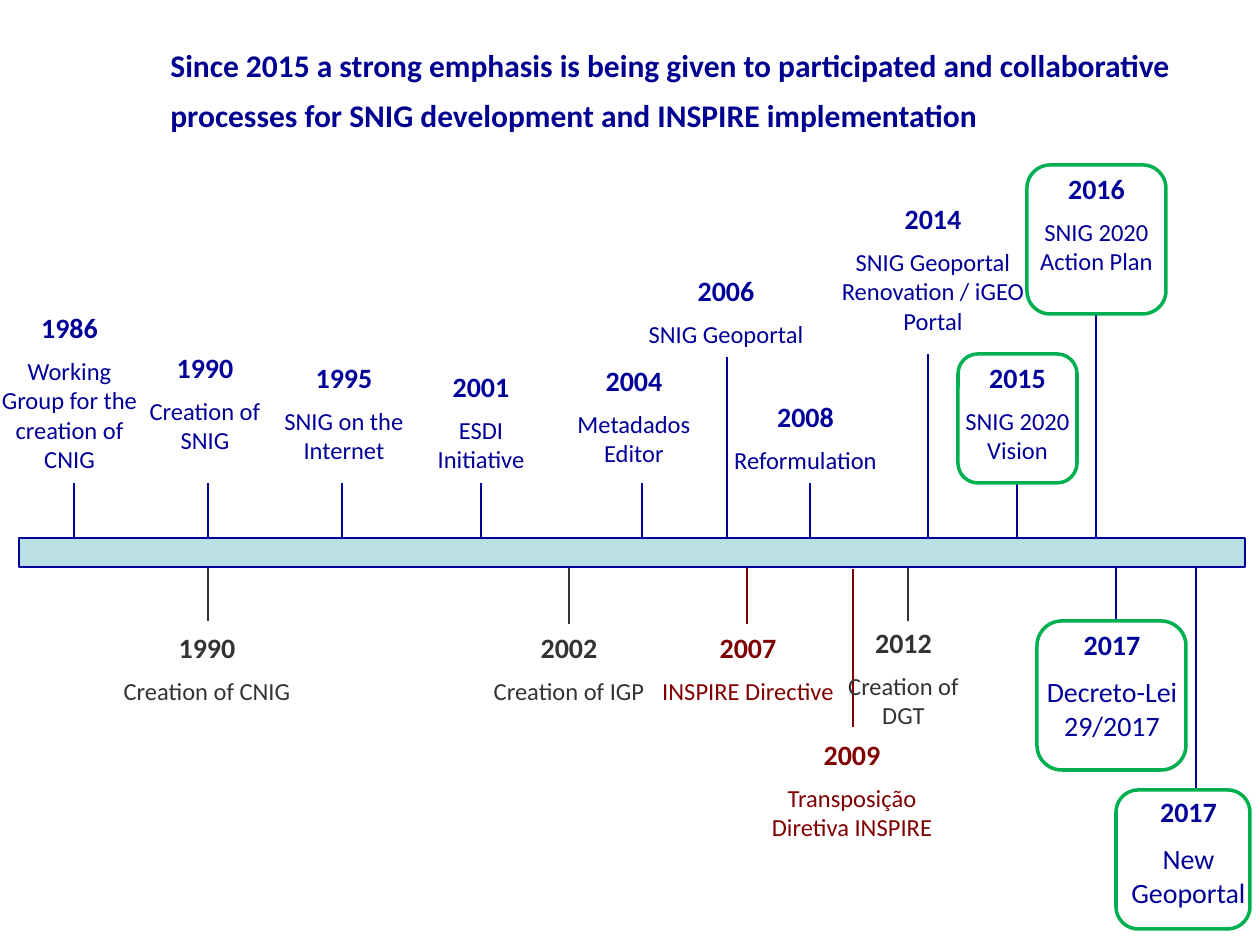
from pptx import Presentation
from pptx.dml.color import RGBColor
from pptx.enum.shapes import MSO_CONNECTOR, MSO_SHAPE
from pptx.enum.text import PP_ALIGN
from pptx.oxml.ns import qn
from pptx.util import Pt
from lxml import etree

LINE = MSO_CONNECTOR.STRAIGHT
RECT = MSO_SHAPE.RECTANGLE
ROUND = MSO_SHAPE.ROUNDED_RECTANGLE
LEFT, MID = PP_ALIGN.LEFT, PP_ALIGN.CENTER

COLORS = {
    "title": "000090",
    "blue": "000099",
    "gray": "333333",
    "red": "800000",
    "green": "00B050",
    "bar": "BBE0E3",
}
FONT = "Calibri"
DPI = 126


def px(n):
    return round(n * 914400 / DPI)


def rgb(name):
    return RGBColor.from_string(COLORS[name])


class Board:
    def __init__(self, slide):
        self.slide = slide

    def stem(self, x, top, end, color):
        line = self.slide.shapes.add_connector(LINE, px(x), px(top), px(x), px(end))
        line.line.color.rgb = rgb(color)
        line.line.width = Pt(1.5)
        etree.SubElement(line._element.spPr, qn("a:effectLst"))

    def shape(self, kind, box, edge, width, fill=None):
        item = self.slide.shapes.add_shape(kind, *map(px, box))
        item.shadow.inherit = False
        if fill:
            item.fill.solid()
            item.fill.fore_color.rgb = rgb(fill)
        else:
            item.fill.background()
        item.line.color.rgb = rgb(edge)
        item.line.width = Pt(width)

    def text(self, box, parts, color, align=MID, lead=None):
        """Each part is one paragraph: (text, size, bold)."""
        frame = self.slide.shapes.add_textbox(*map(px, box)).text_frame
        frame.word_wrap = True
        for i, (words, size, bold) in enumerate(parts):
            para = frame.add_paragraph() if i else frame.paragraphs[0]
            para.alignment = align
            if i:
                para.space_before = Pt(size / 2)
            if lead:
                para.line_spacing = lead
            run = para.add_run()
            run.text = words
            run.font.name = FONT
            run.font.size = Pt(size)
            run.font.bold = bold
            run.font.color.rgb = rgb(color)

    def event(self, x, y, width, rows, color, year, words, size=14):
        height = 61 + rows * (2 * size + 2)
        self.text((x, y, width, height),
                  [(year, 16, True), (words, size, False)], color)


# Stems: x, top, end, color
LOW = [
    (208, 564, 621, "gray"),
    (569, 567, 624, "gray"),
    (747, 567, 624, "red"),
    (853, 569, 727, "red"),
    (908, 564, 621, "gray"),
    (1116, 564, 621, "blue"),
    (1196, 564, 790, "blue"),
]
HIGH = [(x, 483, 539, "blue") for x in (74, 208, 342, 481, 642, 810, 1017)]
HIGH += [(x, top, 538, "blue") for x, top in ((727, 357), (928, 354), (1096, 314))]

# Events: x, y, width, body rows, color, year, words, body size
EVENTS = [
    (-15, 304, 169, 4, "blue", "1986", "Working Group for the creation of CNIG"),
    (117, 344, 176, 2, "blue", "1990", "Creation of SNIG"),
    (256, 354, 176, 2, "blue", "1995", "SNIG on the Internet"),
    (401, 363, 160, 2, "blue", "2001", "ESDI Initiative"),
    (538, 357, 192, 2, "blue", "2004", "Metadados Editor"),
    (621, 267, 210, 1, "blue", "2006", "SNIG Geoportal"),
    (706, 393, 199, 1, "blue", "2008", "Reformulation"),
    (828, 195, 210, 3, "blue", "2014", "SNIG Geoportal Renovation / iGEO Portal"),
    (948, 354, 139, 2, "blue", "2015", "SNIG 2020 Vision"),
    (1027, 165, 139, 2, "blue", "2016", "SNIG 2020 Action Plan"),
    (102, 624, 210, 1, "gray", "1990", "Creation of CNIG"),
    (464, 624, 210, 1, "gray", "2002", "Creation of IGP"),
    (643, 624, 210, 1, "red", "2007", "INSPIRE Directive"),
    (747, 731, 210, 2, "red", "2009", "Transposição Diretiva INSPIRE"),
    (816, 619, 175, 2, "gray", "2012", "Creation of DGT"),
    (1007, 621, 210, 2, "blue", "2017", "Decreto-Lei 29/2017", 16),
    (1106, 788, 165, 2, "blue", "2017", "New Geoportal", 16),
]

# Green frames: left, top, width, height
FRAMES = [
    (958, 354, 119, 129),
    (1027, 165, 139, 149),
    (1037, 621, 149, 149),
    (1116, 790, 134, 139),
]


def main():
    deck = Presentation()
    deck.slide_width, deck.slide_height = px(1260), px(945)
    board = Board(deck.slides.add_slide(deck.slide_layouts[6]))

    # Time bar with its stems
    for stem in LOW:
        board.stem(*stem)
    board.shape(RECT, (19, 538, 1226, 29), "blue", 1.5, "bar")
    for stem in HIGH:
        board.stem(*stem)

    # Events and frames
    for event in EVENTS:
        board.event(*event)
    for frame in FRAMES:
        board.shape(ROUND, frame, "green", 2)

    # Title
    title = ("Since 2015 a strong emphasis is being given to participated and "
             "collaborative processes for SNIG development and INSPIRE implementation")
    board.text((158, 29, 1053, 112), [(title, 18, True)], "title", LEFT, 1.3)

    deck.save("out.pptx")


if __name__ == "__main__":
    main()
